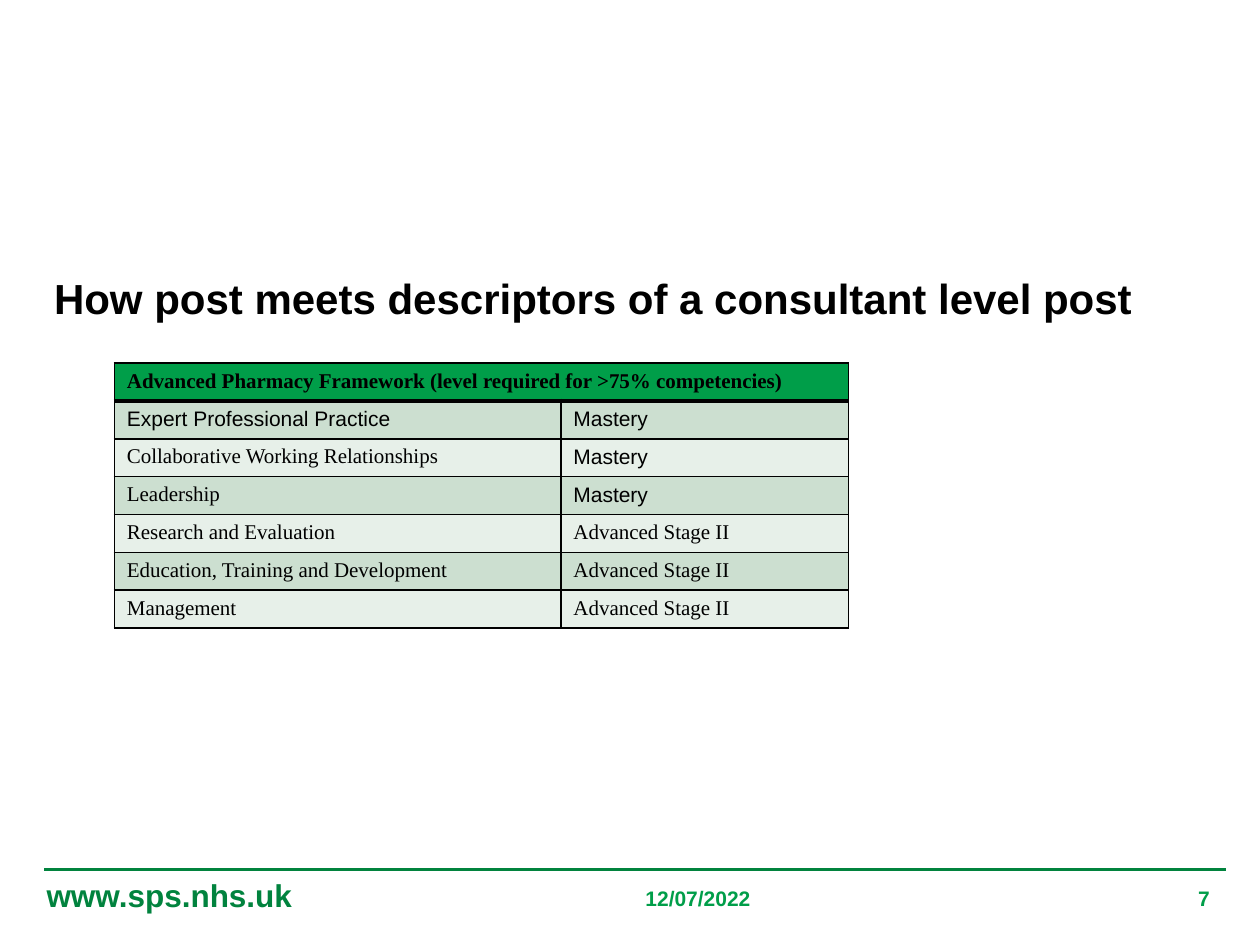
from lxml import etree
from pptx import Presentation
from pptx.dml.color import RGBColor
from pptx.enum import shapes, text
from pptx.oxml import ns
from pptx.util import Pt

BLACK = RGBColor(0, 0, 0)
DARK_GREEN = RGBColor(0x01, 0x83, 0x3E)
GREEN = RGBColor(0x00, 0x9E, 0x49)
BANDS = [RGBColor(0xCC, 0xDF, 0xD0), RGBColor(0xE7, 0xF0, 0xE9)]
SANS, SERIF = "Arial", "Times New Roman"
LEFT, CENTER, RIGHT = text.PP_ALIGN.LEFT, text.PP_ALIGN.CENTER, text.PP_ALIGN.RIGHT

TITLE = "How post meets descriptors of a consultant level post"
# text, left, top, width, height, size, colour, alignment
TEXT_BOXES = [
    ("www.sps.nhs.uk", 19.5, 496.8, 317.5, 28.8, 18, DARK_GREEN, LEFT),
    ("12/07/2022", 308.9, 502.6, 180, 25.2, 12, GREEN, CENTER),
    ("7", 513.4, 502.6, 185, 25.2, 12, GREEN, RIGHT),
    (TITLE, 23.8, 152.2, 660.2, 327.4, 24, BLACK, LEFT),
]
TABLE_HEADER = "Advanced Pharmacy Framework (level required for >75% competencies)"
# competency, its font, level, its font
COMPETENCIES = [
    ("Expert Professional Practice", SANS, "Mastery", SANS),
    ("Collaborative Working Relationships", SERIF, "Mastery", SANS),
    ("Leadership", SERIF, "Mastery", SANS),
    ("Research and Evaluation", SERIF, "Advanced Stage II", SERIF),
    ("Education, Training and Development", SERIF, "Advanced Stage II", SERIF),
    ("Management", SERIF, "Advanced Stage II", SERIF),
]
TABLE_LEFT, TABLE_TOP, ROW_HEIGHT = 65.3, 207.5, 21.65
COLUMN_WIDTHS = [255.2, 164.4]


def add_run(paragraph, content, font_name, size, color, bold):
    run = paragraph.add_run()
    run.text = content
    run.font.name = font_name
    run.font.size = Pt(size)
    run.font.bold = bold
    run.font.color.rgb = color


def add_text_box(slide, content, left, top, width, height, size, color, alignment):
    box = slide.shapes.add_textbox(Pt(left), Pt(top), Pt(width), Pt(height))
    box.text_frame.word_wrap = True
    paragraph = box.text_frame.paragraphs[0]
    paragraph.alignment = alignment
    add_run(paragraph, content, SANS, size, color, True)


def set_borders(cell, widths):
    """Draw black borders; widths are for left, right, top and bottom."""
    properties = cell._tc.get_or_add_tcPr()
    for index, (side, width) in enumerate(zip("LRTB", widths)):
        line = etree.Element(ns.qn(f"a:ln{side}"), w=str(Pt(width)))
        fill = etree.SubElement(line, ns.qn("a:solidFill"))
        etree.SubElement(fill, ns.qn("a:srgbClr"), val=str(BLACK))
        properties.insert(index, line)


def style_cell(cell, fill, border_widths):
    cell.fill.solid()
    cell.fill.fore_color.rgb = fill
    set_borders(cell, border_widths)


def add_competency_table(slide):
    row_count = len(COMPETENCIES) + 1
    table = slide.shapes.add_table(
        row_count, 2, Pt(TABLE_LEFT), Pt(TABLE_TOP),
        Pt(sum(COLUMN_WIDTHS)), Pt(row_count * ROW_HEIGHT)).table
    for column, width in zip(table.columns, COLUMN_WIDTHS):
        column.width = Pt(width)
    for row in table.rows:
        row.height = Pt(ROW_HEIGHT)

    header = table.cell(0, 0)
    header.merge(table.cell(0, 1))
    for column in range(2):
        style_cell(table.cell(0, column), GREEN, (1, 1, 1, 3))
    add_run(header.text_frame.paragraphs[0], TABLE_HEADER, SERIF, 12, BLACK, True)

    for row, (competency, name_font, level, level_font) in enumerate(COMPETENCIES, 1):
        for column, (content, font) in enumerate([(competency, name_font), (level, level_font)]):
            cell = table.cell(row, column)
            style_cell(cell, BANDS[(row - 1) % 2], (1, 1, 3 if row == 1 else 1, 1))
            add_run(cell.text_frame.paragraphs[0], content, font, 12, BLACK, False)


def add_footer_line(slide):
    line = slide.shapes.add_connector(
        shapes.MSO_CONNECTOR.STRAIGHT, Pt(25.2), Pt(496.8), Pt(700.6), Pt(496.8))
    line.line.color.rgb = DARK_GREEN
    line.line.width = Pt(1.5)
    etree.SubElement(line._element.spPr, ns.qn("a:effectLst"))


def main():
    presentation = Presentation()
    presentation.slide_width, presentation.slide_height = Pt(720), Pt(540)
    slide = presentation.slides.add_slide(presentation.slide_layouts[6])
    add_footer_line(slide)
    for box in TEXT_BOXES:
        add_text_box(slide, *box)
    add_competency_table(slide)
    presentation.save("out.pptx")


if __name__ == "__main__":
    main()
